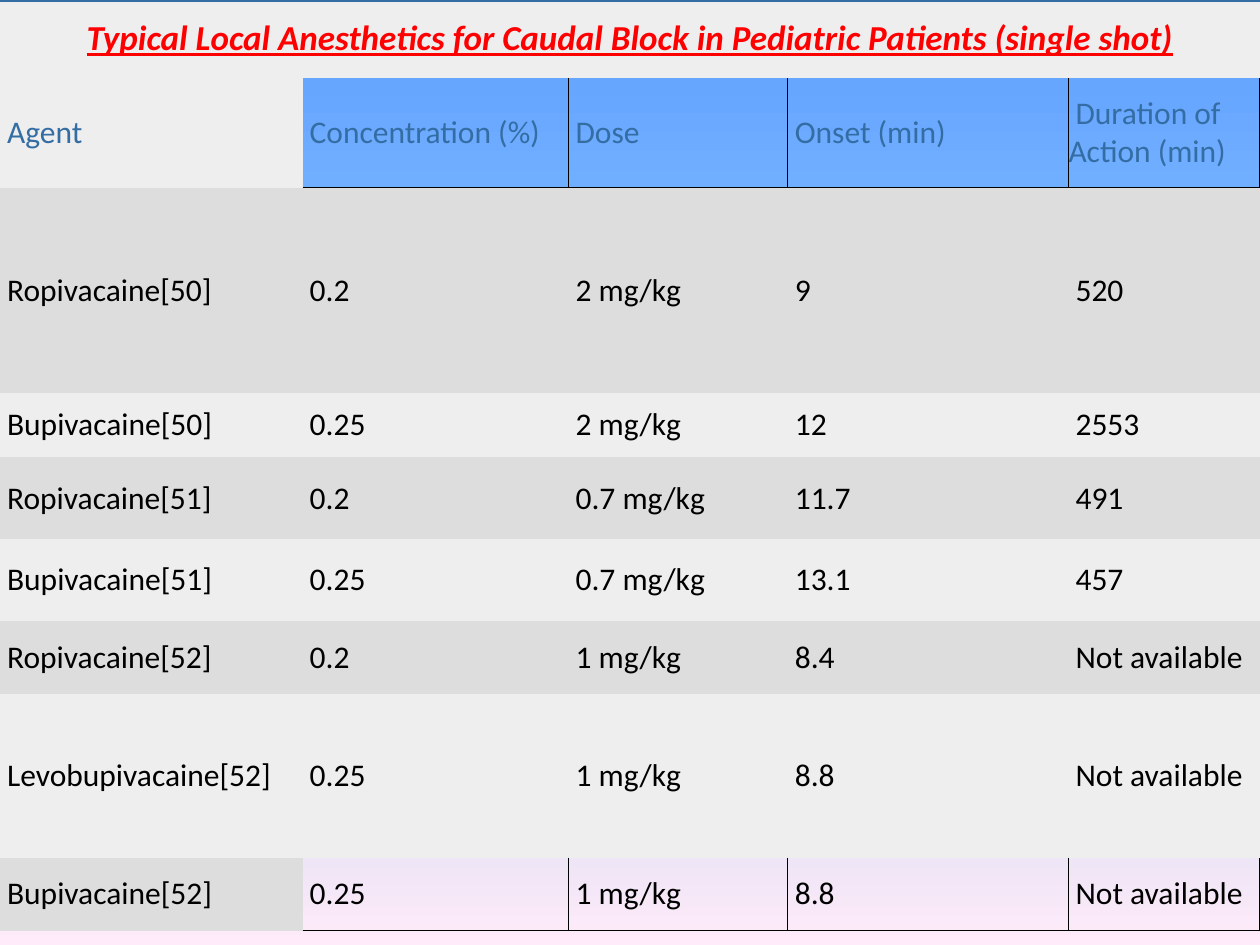
"""Build a slide with a table of local anesthetics for pediatric caudal block."""
from typing import NamedTuple, Optional

import lxml.etree
import pptx
import pptx.dml.color
import pptx.enum.text
import pptx.oxml.ns
import pptx.util

COLORS = {
    "title": "FF0000", "accent": "346DA3", "text": "000000", "grid": "000000",
    "light": "EEEEEE", "dark": "DDDDDD",
}
BACKGROUND_STOPS = {0: "5E9EFF", 40: "85C2FF", 70: "C4D6EB", 100: "FFEBFA"}
PLAIN_TABLE_STYLE = "{2D5ABB26-0587-4C30-8999-92F81FD0307C}"
NO_BREAK_SPACE = chr(160)
TITLE = "Typical Local Anesthetics for Caudal Block in Pediatric Patients (single shot)"
HEADINGS = ("Agent", "Concentration (%)", "Dose", "Onset (min)", "Duration of Action (min)")
COLUMN_WIDTHS = (6.1, 5.36, 4.42, 5.66, 3.86)
TITLE_HEIGHT = 1.57
HEADING_HEIGHT = 2.21


class Anesthetic(NamedTuple):
    """One row of the table, with its height in centimetres."""
    height: float
    agent: str
    concentration: str
    dose: str
    onset: str
    duration: str


ANESTHETICS = (
    Anesthetic(4.14, "Ropivacaine[50]", "0.2", "2 mg/kg", "9", "520"),
    Anesthetic(1.3, "Bupivacaine[50]", "0.25", "2 mg/kg", "12", "2553"),
    Anesthetic(1.65, "Ropivacaine[51]", "0.2", "0.7 mg/kg", "11.7", "491"),
    Anesthetic(1.65, "Bupivacaine[51]", "0.25", "0.7 mg/kg", "13.1", "457"),
    Anesthetic(1.47, "Ropivacaine[52]", "0.2", "1 mg/kg", "8.4", "Not available"),
    Anesthetic(3.3, "Levobupivacaine[52]", "0.25", "1 mg/kg", "8.8", "Not available"),
    Anesthetic(1.47, "Bupivacaine[52]", "0.25", "1 mg/kg", "8.8", "Not available"),
)


def add_color(parent, color: str) -> None:
    """Append an RGB color element."""
    lxml.etree.SubElement(parent, pptx.oxml.ns.qn("a:srgbClr"), val=color)


def paint_background(slide) -> None:
    """Fill the slide with a vertical gradient."""
    fill = slide.background.fill
    fill.gradient()
    fill.gradient_angle = 270
    stops = slide.element.find(".//" + pptx.oxml.ns.qn("a:gsLst"))
    for stop in list(stops):
        stops.remove(stop)
    for position, color in BACKGROUND_STOPS.items():
        stop = lxml.etree.SubElement(stops, pptx.oxml.ns.qn("a:gs"), pos=str(position * 1000))
        add_color(stop, color)


def set_borders(cell, sides: str, color: str, width: float) -> None:
    """Draw the cell borders named by L, R, T and B, in that order."""
    properties = cell._tc.get_or_add_tcPr()
    for index, side in enumerate(sides):
        line = lxml.etree.Element(
            pptx.oxml.ns.qn(f"a:ln{side}"), w=str(pptx.util.Pt(width)))
        add_color(lxml.etree.SubElement(line, pptx.oxml.ns.qn("a:solidFill")), color)
        properties.insert(index, line)


def write_cell(cell, text: str, color: str, fill: Optional[str], size: int = 18) -> None:
    """Set the text and fill of a cell."""
    cell.margin_left = cell.margin_right = cell.margin_top = cell.margin_bottom = 0
    cell.vertical_anchor = pptx.enum.text.MSO_ANCHOR.MIDDLE
    cell.text_frame.text = text
    font = cell.text_frame.paragraphs[0].runs[0].font
    font.name = "Calibri"
    font.size = pptx.util.Pt(size)
    font.bold = font.italic = font.underline = False
    font.color.rgb = pptx.dml.color.RGBColor.from_string(color)
    if fill:
        cell.fill.solid()
        cell.fill.fore_color.rgb = pptx.dml.color.RGBColor.from_string(fill)
    else:
        cell.fill.background()


def write_title(table) -> None:
    """Write the title across the first row."""
    title = table.cell(0, 0)
    title.merge(table.cell(0, len(HEADINGS) - 1))
    write_cell(title, TITLE, COLORS["title"], COLORS["light"], 20)
    paragraph = title.text_frame.paragraphs[0]
    paragraph.alignment = pptx.enum.text.PP_ALIGN.CENTER
    font = paragraph.runs[0].font
    font.bold = font.italic = font.underline = True
    for cell in table.rows[0].cells:
        set_borders(cell, "T", COLORS["accent"], 3)


def write_row(table, row: int, texts: tuple[str, ...], color: str, see_through: bool) -> None:
    """Write a banded row, whose cells after the first may show the background."""
    band = COLORS["dark"] if row % 2 == 0 else COLORS["light"]
    for column, text in enumerate(texts):
        cell = table.cell(row, column)
        is_open = see_through and column > 0
        write_cell(cell, NO_BREAK_SPACE + text, color, None if is_open else band)
        if is_open:
            set_borders(cell, "RB", COLORS["grid"], 1)


def add_anesthetics_table(slide) -> None:
    """Add the whole table."""
    heights = (TITLE_HEIGHT, HEADING_HEIGHT, *(item.height for item in ANESTHETICS))
    shape = slide.shapes.add_table(
        len(heights), len(COLUMN_WIDTHS), 0, 0,
        pptx.util.Cm(sum(COLUMN_WIDTHS)), pptx.util.Cm(sum(heights)))
    table = shape.table
    table._tbl.find(".//" + pptx.oxml.ns.qn("a:tableStyleId")).text = PLAIN_TABLE_STYLE
    table.first_row = table.horz_banding = False
    for column, width in zip(table.columns, COLUMN_WIDTHS):
        column.width = pptx.util.Cm(width)
    for row, height in zip(table.rows, heights):
        row.height = pptx.util.Cm(height)
    write_title(table)
    write_row(table, 1, HEADINGS, COLORS["accent"], True)
    for row, item in enumerate(ANESTHETICS, start=2):
        write_row(table, row, item[1:], COLORS["text"], item is ANESTHETICS[-1])


def main() -> None:
    """Build and save the presentation."""
    presentation = pptx.Presentation()
    presentation.slide_width = pptx.util.Cm(25.4)
    presentation.slide_height = pptx.util.Cm(19.05)
    slide = presentation.slides.add_slide(presentation.slide_layouts[6])
    paint_background(slide)
    add_anesthetics_table(slide)
    presentation.save("out.pptx")


if __name__ == "__main__":
    main()
